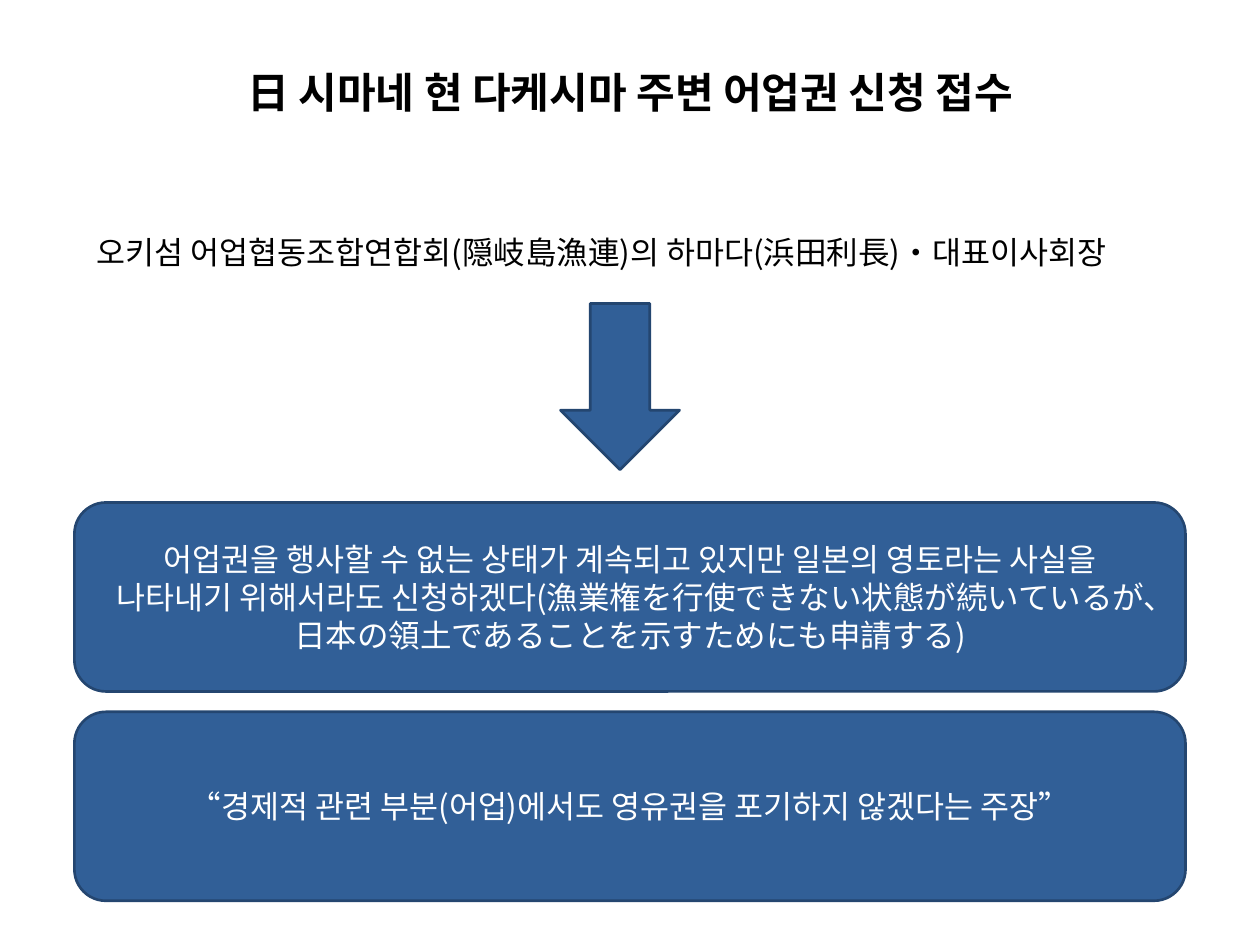
"""Build a slide on the Shimane fishing-rights application."""
from dataclasses import dataclass

from pptx import Presentation
from pptx.dml.color import RGBColor
from pptx.enum.shapes import MSO_SHAPE
from pptx.enum.text import MSO_ANCHOR, PP_ALIGN
from pptx.util import Cm, Pt

ROUNDED, DOWN_ARROW = MSO_SHAPE.ROUNDED_RECTANGLE, MSO_SHAPE.DOWN_ARROW
TOP, MIDDLE = MSO_ANCHOR.TOP, MSO_ANCHOR.MIDDLE
LEFT, CENTER = PP_ALIGN.LEFT, PP_ALIGN.CENTER

TITLE = "日 시마네 현 다케시마 주변 어업권 신청 접수"
APPLICANT = "오키섬 어업협동조합연합회(隠岐島漁連)의 하마다(浜田利長)・대표이사회장"
STATEMENTS = [
    "어업권을 행사할 수 없는 상태가 계속되고 있지만 일본의 영토라는 사실을 "
    "나타내기 위해서라도 신청하겠다(漁業権を行使できない状態が続いているが、"
    "日本の領土であることを示すためにも申請する)",
    "“경제적 관련 부분(어업)에서도 영유권을 포기하지 않겠다는 주장”",
]


@dataclass(frozen=True)
class Theme:
    font: str = "Noto Sans CJK KR"
    title_size: int = 24
    body_size: int = 18
    dark: str = "000000"
    light: str = "FFFFFF"
    fill: str = "315F97"
    outline: str = "244670"
    outline_width: float = 1.5


THEME = Theme()
SLIDE_WIDTH, SLIDE_HEIGHT = 25.4, 19.05
STATEMENT_WIDTH, STATEMENT_HEIGHT = 22.4, 3.81
STATEMENT_TOP, STATEMENT_PITCH = 10.13, 4.22
STATEMENT_INSET = 0.4


def write(shape, wording, size, color, align, anchor, bold=False):
    frame = shape.text_frame
    frame.word_wrap = True
    frame.vertical_anchor = anchor
    frame.text = wording
    paragraph = frame.paragraphs[0]
    paragraph.alignment = align
    for run in paragraph.runs:
        run.font.name = THEME.font
        run.font.size = Pt(size)
        run.font.bold = bold
        run.font.color.rgb = RGBColor.from_string(color)


def add_block(slide, kind, left, top, width, height):
    block = slide.shapes.add_shape(kind, Cm(left), Cm(top), Cm(width), Cm(height))
    block.shadow.inherit = False
    block.fill.solid()
    block.fill.fore_color.rgb = RGBColor.from_string(THEME.fill)
    block.line.color.rgb = RGBColor.from_string(THEME.outline)
    block.line.width = Pt(THEME.outline_width)
    return block


def main():
    deck = Presentation()
    deck.slide_width, deck.slide_height = Cm(SLIDE_WIDTH), Cm(SLIDE_HEIGHT)
    slide = deck.slides.add_slide(deck.slide_layouts[6])

    title = slide.shapes.add_textbox(Cm(1.27), Cm(0.76), Cm(22.86), Cm(3.18))
    write(title, TITLE, THEME.title_size, THEME.dark, CENTER, MIDDLE, bold=True)
    title.text_frame.margin_bottom = Cm(1.14)

    applicant = slide.shapes.add_textbox(Cm(1.7), Cm(4.57), Cm(22), Cm(1.8))
    write(applicant, APPLICANT, THEME.body_size, THEME.dark, LEFT, TOP)

    statement_left = (SLIDE_WIDTH - STATEMENT_WIDTH) / 2
    for index, statement in enumerate(STATEMENTS):
        top = STATEMENT_TOP + index * STATEMENT_PITCH
        block = add_block(slide, ROUNDED, statement_left, top,
                          STATEMENT_WIDTH, STATEMENT_HEIGHT)
        write(block, statement, THEME.body_size, THEME.light, CENTER, MIDDLE)
        block.text_frame.margin_left = Cm(STATEMENT_INSET)
        block.text_frame.margin_right = Cm(STATEMENT_INSET)

    add_block(slide, DOWN_ARROW, 11.3, 6.12, 2.4, 3.35)
    deck.save("out.pptx")


if __name__ == "__main__":
    main()
